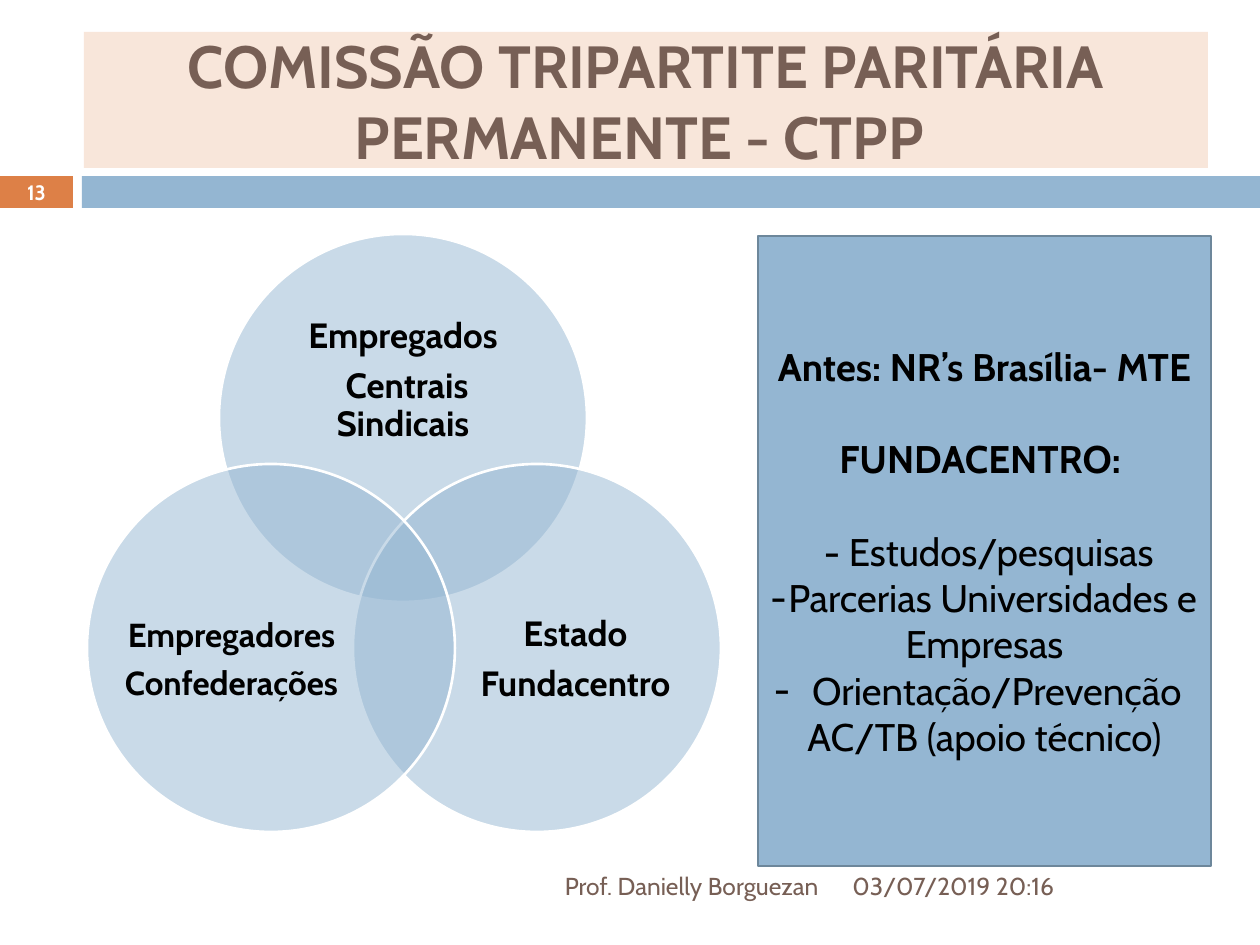
from dataclasses import dataclass

from lxml import etree
from pptx import Presentation
from pptx.dml.color import RGBColor
from pptx.enum.shapes import MSO_SHAPE
from pptx.enum.text import MSO_ANCHOR, MSO_AUTO_SIZE, PP_ALIGN
from pptx.oxml.ns import qn
from pptx.util import Emu, Pt

RECTANGLE, OVAL = MSO_SHAPE.RECTANGLE, MSO_SHAPE.OVAL
MIDDLE = MSO_ANCHOR.MIDDLE
NO_AUTOFIT = MSO_AUTO_SIZE.NONE
LEFT, CENTER, RIGHT = PP_ALIGN.LEFT, PP_ALIGN.CENTER, PP_ALIGN.RIGHT

EMU_PER_PX = 914400 / 126
FONT = "Cabin"
COLORS = {
    "orange": "DD8047",
    "blue": "94B6D2",
    "outline": "6D879B",
    "cream": "F8E6DA",
    "brown": "775F55",
    "black": "000000",
    "white": "FFFFFF",
}
CIRCLE_SIZE = 368
LINE_WIDTH = 1.5


@dataclass(frozen=True)
class Box:
    left: int
    top: int
    width: int
    height: int

    def emu(self) -> list[Emu]:
        return [Emu(round(px * EMU_PER_PX))
                for px in (self.left, self.top, self.width, self.height)]


@dataclass(frozen=True)
class Member:
    circle_left: int
    circle_top: int
    caption: Box
    lines: tuple[str, str]
    size: int


@dataclass(frozen=True)
class Label:
    box: Box
    wording: str
    size: float
    color: str
    align: PP_ALIGN
    bold: bool = False


@dataclass(frozen=True)
class PanelLine:
    wording: str
    bold: bool = False
    space_before: float = 0
    bullet: bool = False


MEMBERS = [
    Member(219, 234, Box(268, 299, 270, 165), ("Empregados", " Centrais Sindicais"), 20),
    Member(353, 464, Box(465, 559, 221, 203), ("Estado", " Fundacentro "), 20),
    Member(87, 464, Box(121, 559, 221, 203), ("Empregadores", "Confederações"), 19),
]
LABELS = [
    Label(Box(840, 861, 368, 50), "03/07/2019 20:16", 14, "brown", LEFT),
    Label(Box(0, 175, 73, 34), "13", 11.9, "white", CENTER, True),
    Label(Box(84, 861, 747, 50), "Prof. Danielly Borguezan", 14, "brown", RIGHT),
]
PANEL_LINES = [
    PanelLine("Antes: NR’s Brasília- MTE", bold=True),
    PanelLine("FUNDACENTRO: ", bold=True, space_before=26.5),
    PanelLine(" - Estudos/pesquisas", space_before=26.5),
    PanelLine("Parcerias Universidades e Empresas", bullet=True),
    PanelLine(" Orientação/Prevenção AC/TB (apoio técnico)", bullet=True),
]


def rgb(color: str) -> RGBColor:
    return RGBColor.from_string(COLORS[color])


def format_text(paragraph, size: float, color: str, bold: bool, align: PP_ALIGN) -> None:
    paragraph.alignment = align
    for run in paragraph.runs:
        run.font.name = FONT
        run.font.size = Pt(size)
        run.font.bold = bold
        run.font.color.rgb = rgb(color)


def add_figure(slide, preset: MSO_SHAPE, box: Box, fill: str, line: str | None = None):
    figure = slide.shapes.add_shape(preset, *box.emu())
    figure.shadow.inherit = False
    figure.fill.solid()
    figure.fill.fore_color.rgb = rgb(fill)
    if line:
        figure.line.color.rgb = rgb(line)
        figure.line.width = Pt(LINE_WIDTH)
    else:
        figure.line.fill.background()
    return figure


def add_text_frame(slide, box: Box):
    frame = slide.shapes.add_textbox(*box.emu()).text_frame
    frame.word_wrap = True
    frame.vertical_anchor = MIDDLE
    return frame


def add_title(slide) -> None:
    title = slide.shapes.title
    title.left, title.top, title.width, title.height = Box(84, 32, 1124, 136).emu()
    title.fill.solid()
    title.fill.fore_color.rgb = rgb("cream")
    frame = title.text_frame
    frame.text = "COMISSÃO TRIPARTITE PARITÁRIA PERMANENTE - CTPP "
    frame.auto_size = NO_AUTOFIT
    frame.vertical_anchor = MIDDLE
    format_text(frame.paragraphs[0], 34, "brown", True, CENTER)


def add_member(slide, member: Member) -> None:
    outline = Box(member.circle_left, member.circle_top, CIRCLE_SIZE, CIRCLE_SIZE)
    circle = add_figure(slide, OVAL, outline, "blue", "white")
    fill_color = circle._element.spPr.find(qn("a:solidFill"))[0]
    etree.SubElement(fill_color, qn("a:alpha"), val="50000")

    frame = add_text_frame(slide, member.caption)
    frame.margin_left = frame.margin_right = frame.margin_top = frame.margin_bottom = 0
    frame.text = "\n".join(member.lines)
    for paragraph in frame.paragraphs:
        paragraph.line_spacing = 0.9
        paragraph.space_after = Pt(7)
        format_text(paragraph, member.size, "black", True, CENTER)


def add_label(slide, label: Label) -> None:
    frame = add_text_frame(slide, label.box)
    frame.text = label.wording
    format_text(frame.paragraphs[0], label.size, label.color, label.bold, label.align)


def add_panel(slide) -> None:
    panel = add_figure(slide, RECTANGLE, Box(758, 236, 453, 630), "blue", "outline")
    frame = panel.text_frame
    frame.word_wrap = True
    frame.vertical_anchor = MIDDLE
    frame.text = "\n".join(line.wording for line in PANEL_LINES)
    for paragraph, line in zip(frame.paragraphs, PANEL_LINES):
        if line.space_before:
            paragraph.space_before = Pt(line.space_before)
        if line.bullet:
            properties = paragraph._p.get_or_add_pPr()
            etree.SubElement(properties, qn("a:buFont"), typeface=FONT)
            etree.SubElement(properties, qn("a:buChar"), char="-")
        format_text(paragraph, 22, "black", line.bold, CENTER)


def main() -> None:
    presentation = Presentation()
    page = Box(0, 0, 1260, 945).emu()
    presentation.slide_width, presentation.slide_height = page[2:]
    slide = presentation.slides.add_slide(presentation.slide_layouts[5])

    add_figure(slide, RECTANGLE, Box(0, 176, 73, 32), "orange")
    add_figure(slide, RECTANGLE, Box(82, 176, 1178, 32), "blue")
    add_title(slide)
    for member in MEMBERS:
        add_member(slide, member)
    add_panel(slide)
    for label in LABELS:
        add_label(slide, label)
    presentation.save("out.pptx")


if __name__ == "__main__":
    main()
